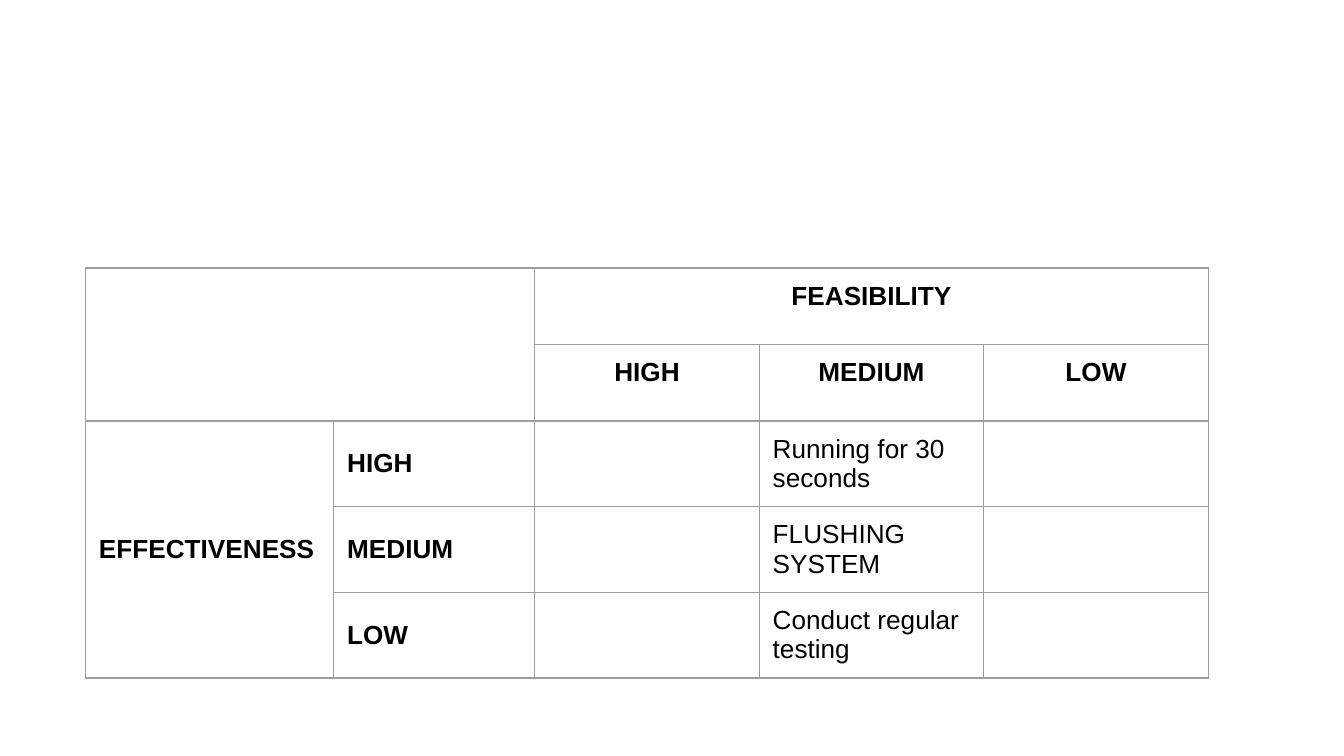
from lxml import etree
from pptx import Presentation
from pptx.dml.color import RGBColor
from pptx.enum.text import MSO_ANCHOR, PP_ALIGN
from pptx.oxml.ns import qn
from pptx.util import Pt

ROWS = [
    ["", "", "FEASIBILITY", "", ""],
    ["", "", "HIGH", "MEDIUM", "LOW"],
    ["EFFECTIVENESS", "HIGH", "", "Running for 30 seconds", ""],
    ["", "MEDIUM", "", "FLUSHING SYSTEM", ""],
    ["", "LOW", "", "Conduct regular testing", ""],
]
MERGES = [((0, 0), (1, 1)), ((0, 2), (0, 4)), ((2, 0), (4, 0))]
COL_WIDTHS = [133, 107.75, 120.25, 120.25, 120.25]
ROW_HEIGHT = 41
LEFT, TOP = 45.8, 143.6
HEADER_ROWS, LABEL_COLS = 2, 2
MARGIN = 7.2
BORDER, TEXT = "9E9E9E", "000000"


def color(hex_value):
    return RGBColor.from_string(hex_value)


def add_borders(cell):
    tc_pr = cell._tc.get_or_add_tcPr()
    for i, side in enumerate(("lnL", "lnR", "lnT", "lnB")):
        ln = etree.Element(qn(f"a:{side}"), w=str(Pt(0.75)))
        fill = etree.SubElement(ln, qn("a:solidFill"))
        etree.SubElement(fill, qn("a:srgbClr"), val=BORDER)
        tc_pr.insert(i, ln)


def format_cell(cell, text, row, col):
    header, label = row < HEADER_ROWS, col < LABEL_COLS
    cell.fill.background()
    add_borders(cell)
    for side in ("left", "right", "top", "bottom"):
        setattr(cell, f"margin_{side}", Pt(MARGIN))
    if label and not header:
        cell.vertical_anchor = MSO_ANCHOR.MIDDLE
    p = cell.text_frame.paragraphs[0]
    p.alignment = PP_ALIGN.CENTER if header else PP_ALIGN.LEFT
    style = {"name": "Arial", "size": Pt(14), "bold": header or label}
    if text:
        r = p.add_run()
        r.text = text
        r.font.color.rgb = color(TEXT)
        fonts = [r.font]
    else:
        fonts = [p.font]
    for font in fonts:
        for name, value in style.items():
            setattr(font, name, value)


prs = Presentation()
prs.slide_width, prs.slide_height = Pt(720), Pt(405)
s = prs.slides.add_slide(prs.slide_layouts[6])

table = s.shapes.add_table(
    len(ROWS), len(COL_WIDTHS), Pt(LEFT), Pt(TOP),
    Pt(sum(COL_WIDTHS)), Pt(ROW_HEIGHT * len(ROWS)),
).table
table.first_row = table.horz_banding = False
for column, width in zip(table.columns, COL_WIDTHS):
    column.width = Pt(width)
for row in table.rows:
    row.height = Pt(ROW_HEIGHT)
for i, texts in enumerate(ROWS):
    for j, text in enumerate(texts):
        format_cell(table.cell(i, j), text, i, j)
for first, last in MERGES:
    table.cell(*first).merge(table.cell(*last))

prs.save("out.pptx")
